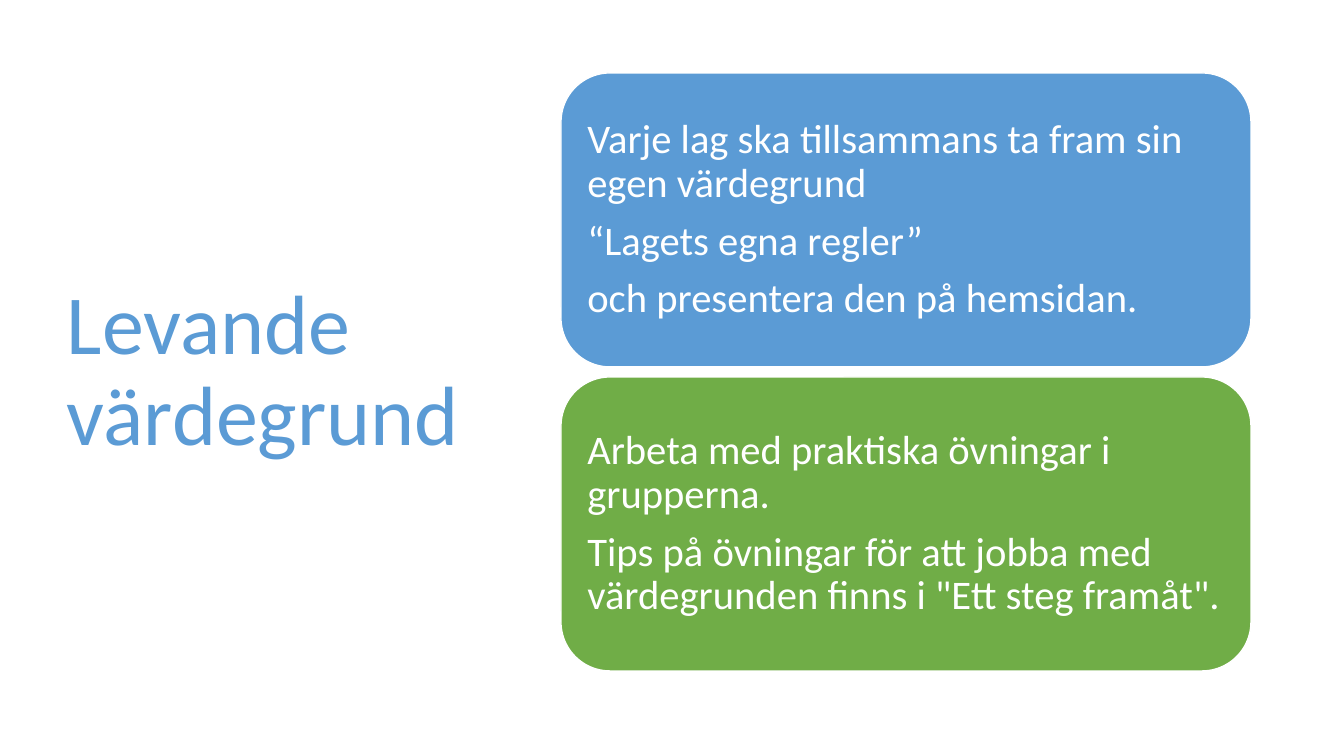
from pptx import Presentation
from pptx.dml.color import RGBColor
from pptx.enum.shapes import MSO_SHAPE
from pptx.enum.text import MSO_ANCHOR, PP_ALIGN
from pptx.util import Pt

SCALE = 12192000 / 1344
COLORS = {"blue": "5B9BD5", "green": "70AD47", "white": "FFFFFF"}
CARDS = [
    ("blue", [
        "Varje lag ska tillsammans ta fram sin egen värdegrund",
        "“Lagets egna regler”",
        "och presentera den på hemsidan.",
    ]),
    ("green", [
        "Arbeta med praktiska övningar i grupperna.",
        'Tips på övningar för att jobba med värdegrunden finns i "Ett steg framåt".',
    ]),
]


def px(n):
    return round(n * SCALE)


def rgb(name):
    return RGBColor.from_string(COLORS[name])


def apply(obj, values):
    for name, value in values.items():
        setattr(obj, name, value)


def write(tf, texts, size, color, margins, after=0):
    apply(tf, {"word_wrap": True, "vertical_anchor": MSO_ANCHOR.MIDDLE})
    for side, margin in zip(("left", "top", "right", "bottom"), margins):
        setattr(tf, f"margin_{side}", px(margin))
    for i, text in enumerate(texts):
        p = tf.add_paragraph() if i else tf.paragraphs[0]
        apply(p, {"alignment": PP_ALIGN.LEFT, "line_spacing": 0.9,
                  "space_after": Pt(after)})
        r = p.add_run()
        r.text = text
        apply(r.font, {"name": "Calibri", "size": Pt(size)})
        r.font.color.rgb = rgb(color)


def add_title(s, x, y, w, h):
    sp = s.shapes.add_textbox(px(x), px(y), px(w), px(h))
    write(sp.text_frame, ["Levande värdegrund"], 60, "blue", (10, 5, 10, 5))


def add_cards(s, x, y, w, h, gap=10):
    card_h = (h - gap * (len(CARDS) - 1)) // len(CARDS)
    for i, (color, texts) in enumerate(CARDS):
        top = y + i * (card_h + gap)
        sp = s.shapes.add_shape(MSO_SHAPE.ROUNDED_RECTANGLE,
                                px(x), px(top), px(w), px(card_h))
        sp.shadow.inherit = False
        sp.fill.solid()
        sp.fill.fore_color.rgb = rgb(color)
        sp.line.color.rgb = rgb("white")
        sp.line.width = Pt(1)
        write(sp.text_frame, texts, 29, "white", (12, 12, 12, 12), after=10)


def main():
    prs = Presentation()
    apply(prs, {"slide_width": px(1344), "slide_height": px(756)})
    s = prs.slides.add_slide(prs.slide_layouts[6])
    add_title(s, 57, 69, 419, 607)
    add_cards(s, 561, 73, 690, 598)
    prs.save("out.pptx")


if __name__ == "__main__":
    main()
